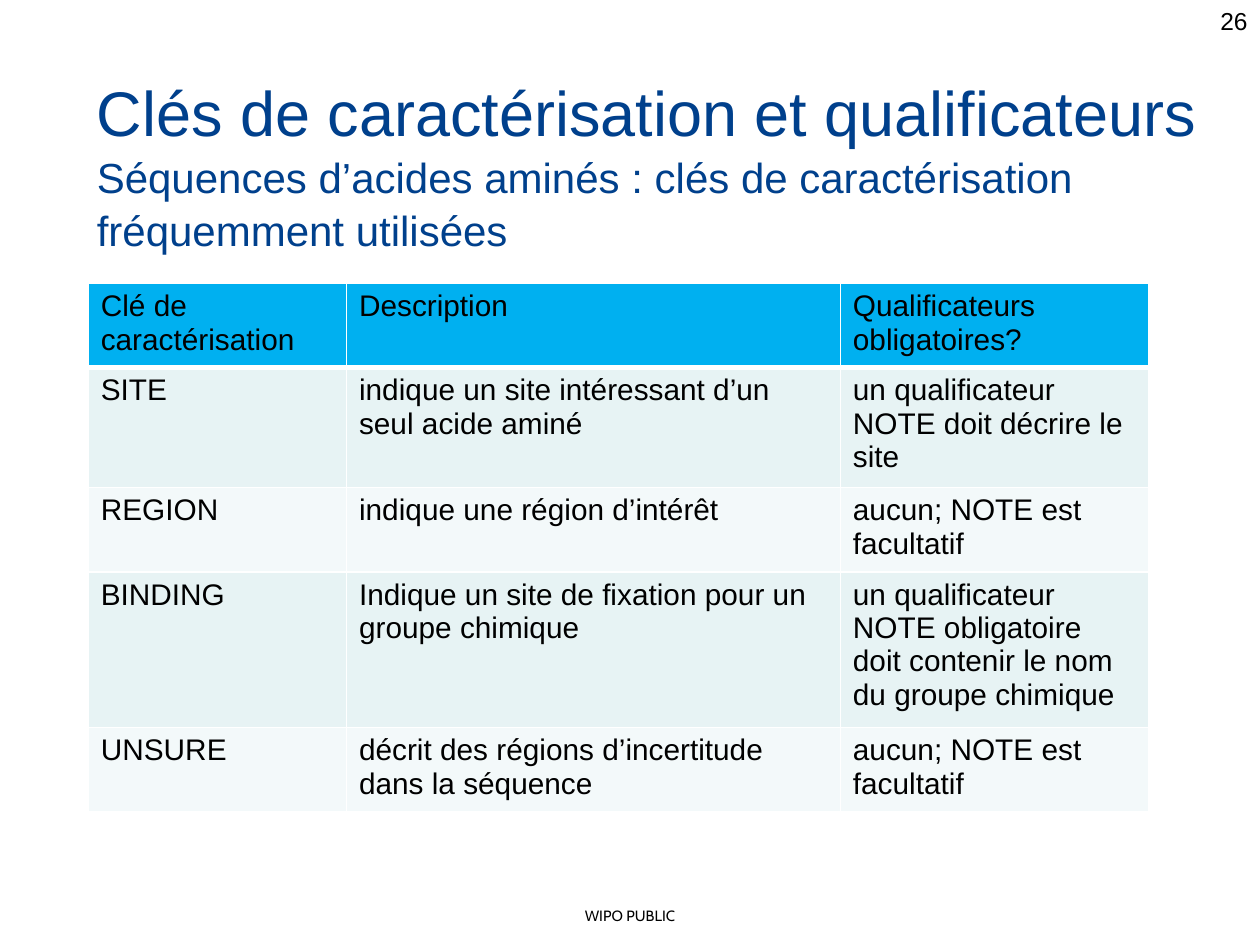
import pptx
import pptx.dml.color
import pptx.enum.text
import pptx.oxml
import pptx.oxml.ns
import pptx.util

Inches, Pt = pptx.util.Inches, pptx.util.Pt
RGBColor = pptx.dml.color.RGBColor
ALIGN = pptx.enum.text.PP_ALIGN

BLACK = RGBColor(0x00, 0x00, 0x00)
WHITE = RGBColor(0xFF, 0xFF, 0xFF)
NAVY = RGBColor(0x00, 0x40, 0x8C)
HEADER = RGBColor(0x00, 0xB0, 0xF0)
BANDS = [RGBColor(0xE7, 0xF3, 0xF4), RGBColor(0xF3, 0xF9, 0xFA)]

COLUMN_WIDTHS = [2.05, 3.92, 2.45]
ROW_HEIGHTS = [0.66, 0.95, 0.67, 1.23, 0.67]
ROWS = [
    ["Clé de caractérisation", "Description", "Qualificateurs obligatoires?"],
    ["SITE", "indique un site intéressant d’un seul acide aminé",
     "un qualificateur NOTE doit décrire le site"],
    ["REGION", "indique une région d’intérêt", "aucun; NOTE est facultatif"],
    ["BINDING", "Indique un site de fixation pour un groupe chimique",
     "un qualificateur NOTE obligatoire doit contenir le nom du groupe chimique"],
    ["UNSURE", "décrit des régions d’incertitude dans la séquence",
     "aucun; NOTE est facultatif"],
]


def write(p, text, size, color=BLACK, font="Arial", **paragraph_format):
    for name, value in paragraph_format.items():
        setattr(p, name, value)
    r = p.add_run()
    r.text = text
    for name, value in {"size": Pt(size), "name": font}.items():
        setattr(r.font, name, value)
    r.font.color.rgb = color


def add_text_frame(slide, box):
    tf = slide.shapes.add_textbox(*map(Inches, box)).text_frame
    tf.word_wrap = True
    return tf


def add_title(slide, box):
    tf = add_text_frame(slide, box)
    tf.margin_top = Inches(0.08)
    write(tf.paragraphs[0], "Clés de caractérisation et qualificateurs", 36, NAVY,
          line_spacing=1.05)
    write(tf.add_paragraph(),
          "Séquences d’acides aminés\u00a0: clés de caractérisation fréquemment utilisées",
          24, NAVY, line_spacing=1.05)


def add_page_number(slide, box):
    write(add_text_frame(slide, box).paragraphs[0], "26", 14, alignment=ALIGN.RIGHT)


def add_footer(slide, box):
    write(add_text_frame(slide, box).paragraphs[0], "WIPO PUBLIC", 8.5, font="Cabin",
          alignment=ALIGN.CENTER)


def set_borders(cell, widths):
    """Draw white borders; widths maps L, R, T and B, in that order, to points."""
    tc_pr = cell._tc.get_or_add_tcPr()
    for i, (side, width) in enumerate(widths.items()):
        tc_pr.insert(i, pptx.oxml.parse_xml(
            f'<a:ln{side} {pptx.oxml.ns.nsdecls("a")} w="{Pt(width)}"><a:solidFill>'
            f'<a:srgbClr val="{WHITE}"/></a:solidFill></a:ln{side}>'))


def add_feature_table(slide, box):
    table = slide.shapes.add_table(len(ROWS), len(COLUMN_WIDTHS), *map(Inches, box)).table
    for column, width in zip(table.columns, COLUMN_WIDTHS):
        column.width = Inches(width)
    for i, (row, height) in enumerate(zip(table.rows, ROW_HEIGHTS)):
        row.height = Inches(height)
        for cell, text in zip(row.cells, ROWS[i]):
            cell.fill.solid()
            cell.fill.fore_color.rgb = BANDS[(i - 1) % 2] if i else HEADER
            set_borders(cell, {"L": 1, "R": 1, "T": 3 if i == 1 else 1,
                               "B": 1 if i else 3})
            write(cell.text_frame.paragraphs[0], text, 17)


def main():
    prs = pptx.Presentation()
    prs.slide_width, prs.slide_height = Inches(10), Inches(7.5)
    slide = prs.slides.add_slide(prs.slide_layouts[6])
    add_footer(slide, (0, 7.15, 10, 0.24))
    add_page_number(slide, (7.67, 0, 2.33, 0.52))
    add_title(slide, (0.67, 0.47, 9, 1.25))
    add_feature_table(slide, (0.7, 2.25, sum(COLUMN_WIDTHS), sum(ROW_HEIGHTS)))
    prs.save("out.pptx")


if __name__ == "__main__":
    main()
